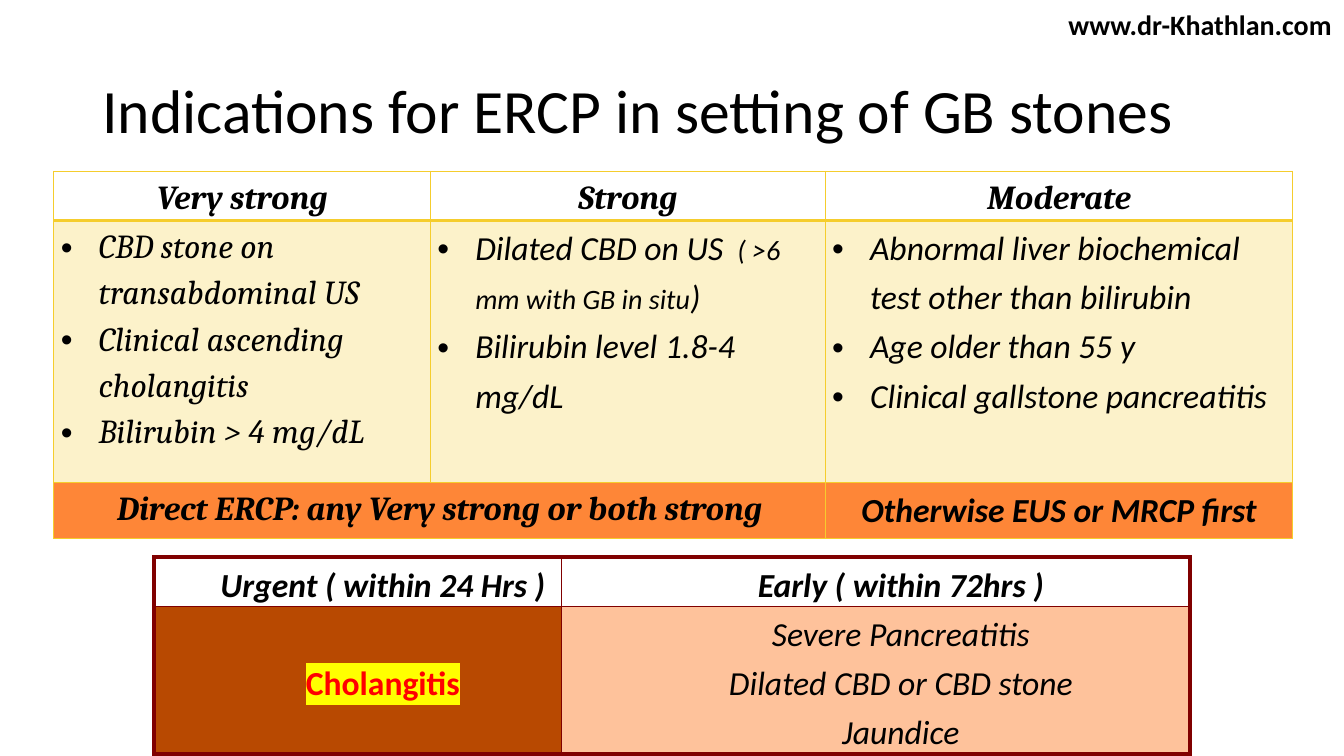
from pptx import Presentation
from pptx.dml.color import RGBColor
from pptx.enum.text import MSO_ANCHOR, PP_ALIGN
from pptx.oxml.ns import qn
from pptx.util import Pt
from lxml.etree import SubElement, Element

HUES = {
    "black": "000000", "white": "FFFFFF", "red": "FF0000", "glow": "FFFF00",
    "gold": "F5CD2D", "cream": "FCF2CA", "orange": "FE8637",
    "maroon": "800000", "brown": "B84901", "peach": "FEC29B",
}


def tint(name):
    return RGBColor.from_string(HUES[name])


def style(run, font="Calibri", size=24, hue="black", bold=False, slant=False):
    run.font.name = font
    run.font.size = Pt(size)
    run.font.color.rgb = tint(hue)
    run.font.bold = bold
    run.font.italic = slant


def add_title(slide, text):
    title = slide.shapes.title
    title.left, title.top, title.width, title.height = Pt(66), Pt(29), Pt(828), Pt(104)
    frame = title.text_frame
    frame.text = text
    frame.vertical_anchor = MSO_ANCHOR.MIDDLE
    para = frame.paragraphs[0]
    para.alignment = PP_ALIGN.LEFT
    para.line_spacing = 0.9
    style(para.runs[0], size=44)


def add_site(slide, text):
    box = slide.shapes.add_textbox(Pt(756), Pt(2), Pt(204.5), Pt(31.5))
    frame = box.text_frame
    frame.word_wrap = False
    frame.text = text
    style(frame.paragraphs[0].runs[0], size=20, bold=True)


def add_grid(slide, left, top, cols, rows):
    frame = slide.shapes.add_table(
        len(rows), len(cols), Pt(left), Pt(top), Pt(sum(cols)), Pt(sum(rows)))
    table = frame.table
    table.first_row = table.horz_banding = False
    for col, width in zip(table.columns, cols):
        col.width = Pt(width)
    for row, height in zip(table.rows, rows):
        row.height = Pt(height)
    return table


def edge(cell, hue, widths):
    props = cell._tc.get_or_add_tcPr()
    for side, width in zip("LRTB", widths):
        line = SubElement(props, qn("a:ln" + side), w=str(Pt(width)))
        fill = SubElement(line, qn("a:solidFill"))
        SubElement(fill, qn("a:srgbClr"), val=HUES[hue])


def indent(para, left, first, dot=False):
    props = para._p.get_or_add_pPr()
    props.set("marL", str(Pt(left)))
    props.set("indent", str(Pt(first)))
    if dot:
        SubElement(props, qn("a:buFont"), typeface="Arial")
        SubElement(props, qn("a:buChar"), char="•")


def fill_cell(cell, lines, fill, line, widths, dot=False, left=0, first=0,
              anchor=MSO_ANCHOR.TOP, **look):
    edge(cell, line, widths)
    cell.fill.solid()
    cell.fill.fore_color.rgb = tint(fill)
    cell.margin_left = cell.margin_right = Pt(5)
    cell.margin_top = cell.margin_bottom = 0
    cell.vertical_anchor = anchor
    frame = cell.text_frame
    frame.text = "\n".join(lines)
    for para in frame.paragraphs:
        indent(para, left, first, dot)
        para.alignment = PP_ALIGN.LEFT if dot else PP_ALIGN.CENTER
        para.line_spacing = 1.2
        for run in para.runs:
            style(run, **look)


def add_run(para, text, **look):
    run = para.add_run()
    run.text = text
    style(run, **look)


def glow(run):
    mark = Element(qn("a:highlight"))
    SubElement(mark, qn("a:srgbClr"), val=HUES["glow"])
    run.font._element.find(qn("a:solidFill")).addnext(mark)


def add_signs(slide):
    grid = add_grid(slide, 38.5, 122.5, (269, 282, 334), (35, 187, 40))
    head = dict(line="gold", first=-18, bold=True, slant=True)
    for col, text in enumerate(("Very strong", "Strong", "Moderate")):
        fill_cell(grid.cell(0, col), [text], "white", widths=(1, 1, 1, 2.25),
                  font="Cambria", **head)
    lists = (
        ("Cambria", ["CBD stone on transabdominal US", "Clinical ascending cholangitis",
                     "Bilirubin > 4 mg/dL"]),
        ("Calibri", ["Dilated CBD on US ", "Bilirubin level 1.8-4 mg/dL"]),
        ("Calibri", ["Abnormal liver biochemical test other than bilirubin",
                     "Age older than 55 y", "Clinical gallstone pancreatitis"]),
    )
    for col, (font, lines) in enumerate(lists):
        fill_cell(grid.cell(1, col), lines, "cream", "gold", (1, 1, 2.25, 1),
                  dot=True, left=27, first=-27, font=font, slant=True)
    para = grid.cell(1, 1).text_frame.paragraphs[0]
    add_run(para, " ( >6 mm with GB in situ", size=20, slant=True)
    add_run(para, ")", slant=True)
    grid.cell(2, 0).merge(grid.cell(2, 1))
    for col, font, text in (
            (0, "Cambria", "Direct ERCP: any Very strong or both strong"),
            (2, "Calibri", "Otherwise EUS or MRCP first")):
        fill_cell(grid.cell(2, col), [text], "orange", widths=(1, 1, 1, 1),
                  font=font, **head)


def add_times(slide):
    grid = add_grid(slide, 110, 398, (291, 449), (35, 105.5))
    base = dict(line="maroon", left=36, anchor=MSO_ANCHOR.MIDDLE)
    heads = ("Urgent ( within 24 Hrs )", "Early ( within 72hrs )")
    sides = ((3, 1), (1, 3))
    for col, (text, pair) in enumerate(zip(heads, sides)):
        fill_cell(grid.cell(0, col), [text], "white", widths=pair + (3, 1),
                  bold=True, slant=True, **base)
    urgent = grid.cell(1, 0)
    fill_cell(urgent, ["Cholangitis"], "brown", widths=sides[0] + (1, 3),
              hue="red", bold=True, **base)
    glow(urgent.text_frame.paragraphs[0].runs[0])
    early = ["Severe Pancreatitis", "Dilated CBD or CBD stone", "Jaundice"]
    fill_cell(grid.cell(1, 1), early, "peach", widths=sides[1] + (1, 3),
              slant=True, **base)


def main():
    deck = Presentation()
    deck.slide_width, deck.slide_height = Pt(960), Pt(540)
    slide = deck.slides.add_slide(deck.slide_layouts[5])
    add_site(slide, "www.dr-Khathlan.com")
    add_title(slide, "Indications for ERCP in setting of GB stones")
    add_signs(slide)
    add_times(slide)
    deck.save("out.pptx")


if __name__ == "__main__":
    main()
